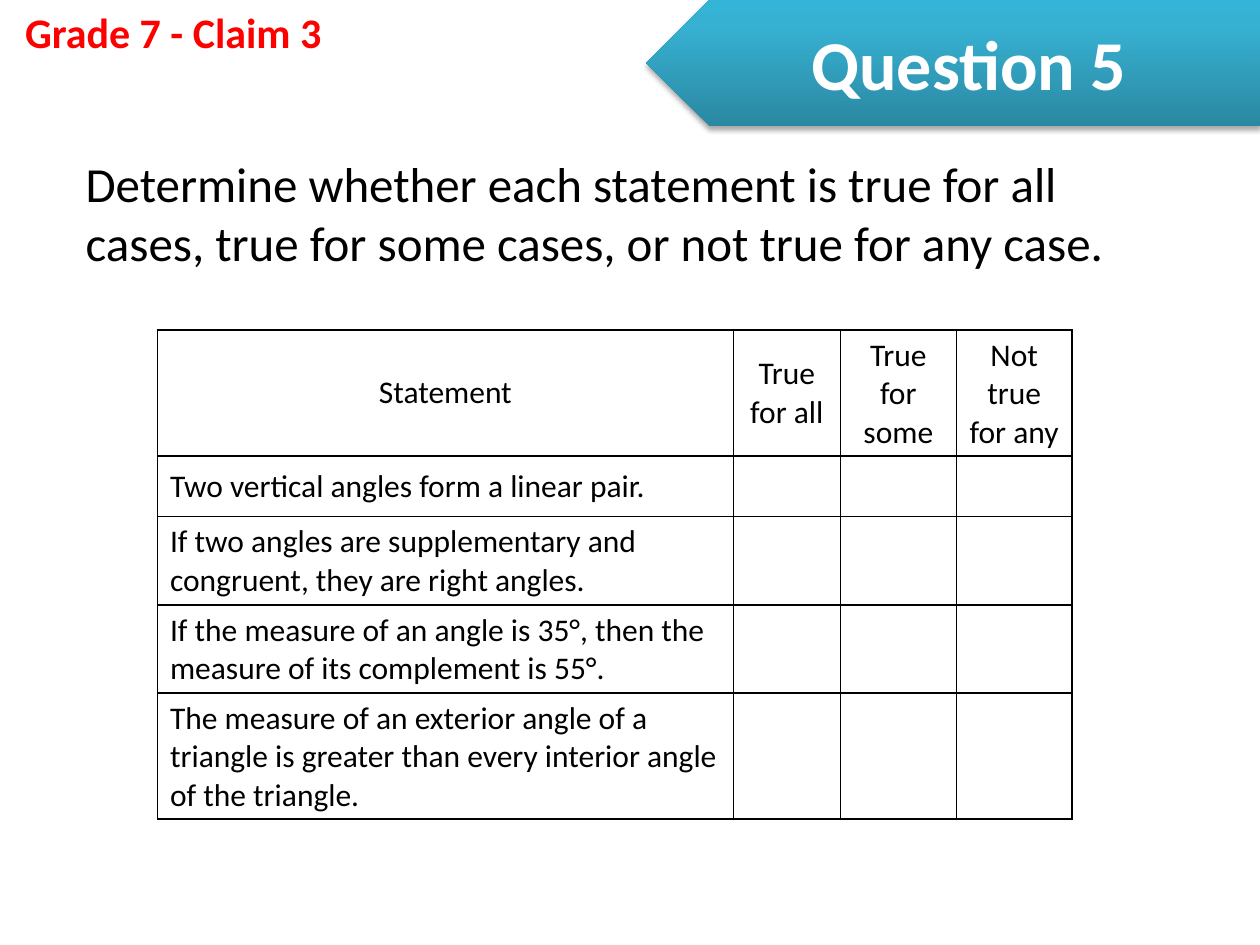
from pptx import Presentation
from pptx.dml.color import RGBColor
from pptx.enum.shapes import MSO_SHAPE as Preset
from pptx.enum.text import MSO_ANCHOR as Anchor, MSO_AUTO_SIZE as AutoSize, PP_ALIGN as Align
from pptx.oxml import parse_xml
from pptx.oxml.ns import nsdecls
from pptx.util import Inches, Pt

COLORS = {
    "black": "000000",
    "white": "FFFFFF",
    "red": "FF0000",
    "teal_dark": "2A88A2",
    "teal": "37B1D2",
    "teal_light": "34B4D6",
}
BANNER_STOPS = [(0, "teal_dark"), (80, "teal"), (100, "teal_light")]
COLUMN_WIDTHS = [4.57, 0.85, 0.92, 0.92]
ROW_HEIGHTS = [0.43, 0.48, 0.67, 0.63, 0.87]
HEADERS = ["Statement", "True for all", "True for some", "Not true for any"]
STATEMENTS = [
    "Two vertical angles form a linear pair.",
    "If two angles are supplementary and congruent, they are right angles.",
    "If the measure of an angle is 35°, then the measure of its complement is 55°.",
    "The measure of an exterior angle of a triangle is greater than every interior angle of the triangle.",
]


def place(shape, box):
    for name, value in zip(("left", "top", "width", "height"), box):
        setattr(shape, name, Inches(value))


def write(frame, text, size, color="black", bold=False, align=Align.LEFT):
    frame.text = text
    paragraph = frame.paragraphs[0]
    paragraph.alignment = align
    font = paragraph.runs[0].font
    for name, value in {"name": "Calibri", "size": Pt(size), "bold": bold}.items():
        setattr(font, name, value)
    font.color.rgb = RGBColor.from_string(COLORS[color])
    return paragraph


def add_banner(slide, text):
    left, width, height = 5.13, 4.87, 1
    banner = slide.shapes.add_shape(Preset.PENTAGON, 0, 0, 0, 0)
    place(banner, (left, 0, width, height))
    properties = banner.element.spPr
    properties.xfrm.set("flipH", "1")
    stops = "".join(
        f'<a:gs pos="{share * 1000}"><a:srgbClr val="{COLORS[color]}"/></a:gs>'
        for share, color in BANNER_STOPS
    )
    properties.append(parse_xml(
        f'<a:gradFill {nsdecls("a")} rotWithShape="1"><a:gsLst>{stops}</a:gsLst>'
        '<a:lin ang="16200000" scaled="0"/></a:gradFill>'
    ))
    banner.line.fill.background()
    properties.append(parse_xml(
        f'<a:effectLst {nsdecls("a")}>'
        f'<a:outerShdw blurRad="{Pt(3.1)}" dist="{Pt(1.8)}" dir="5400000" rotWithShape="0">'
        f'<a:srgbClr val="{COLORS["black"]}"><a:alpha val="35000"/></a:srgbClr>'
        '</a:outerShdw></a:effectLst>'
    ))

    title = slide.shapes.title
    point = height / 4
    place(title, (left + point, 0, width - point, height))
    title.text_frame.vertical_anchor = Anchor.MIDDLE
    write(title.text_frame, text, 40, "white", True, Align.CENTER)
    banner.element.addnext(title.element)


def add_label(slide, text):
    label = slide.shapes.add_textbox(0, 0, Inches(2.75), Inches(0.5))
    frame = label.text_frame
    frame.word_wrap = True
    frame.auto_size = AutoSize.SHAPE_TO_FIT_TEXT
    write(frame, text, 24, "red", True, Align.CENTER)


def fill_body(slide, text):
    body = slide.placeholders[1]
    place(body, (0.58, 1.17, 8.33, 1.25))
    properties = write(body.text_frame, text, 28)._p.get_or_add_pPr()
    for name in ("marL", "indent"):
        properties.set(name, "0")
    properties.append(parse_xml(f'<a:buNone {nsdecls("a")}/>'))


def format_cell(cell):
    cell.vertical_anchor = Anchor.MIDDLE
    properties = cell._tc.get_or_add_tcPr()
    for side in ("lnL", "lnR", "lnT", "lnB"):
        properties.append(parse_xml(
            f'<a:{side} {nsdecls("a")} w="{Pt(1)}"><a:solidFill>'
            f'<a:srgbClr val="{COLORS["black"]}"/></a:solidFill></a:{side}>'
        ))
    cell.fill.background()


def add_statement_table(slide):
    table = slide.shapes.add_table(
        len(ROW_HEIGHTS), len(COLUMN_WIDTHS),
        Inches(1.25), Inches(2.62), Inches(sum(COLUMN_WIDTHS)), Inches(sum(ROW_HEIGHTS)),
    ).table
    table.first_row = table.horz_banding = False
    for column, width in zip(table.columns, COLUMN_WIDTHS):
        column.width = Inches(width)
    for row, height in zip(table.rows, ROW_HEIGHTS):
        row.height = Inches(height)
    for cell in table.iter_cells():
        format_cell(cell)
    for index, text in enumerate(HEADERS):
        write(table.cell(0, index).text_frame, text, 18, align=Align.CENTER)
    for index, text in enumerate(STATEMENTS, start=1):
        write(table.cell(index, 0).text_frame, text, 18)


def main():
    presentation = Presentation()
    presentation.slide_width, presentation.slide_height = Inches(10), Inches(7.5)
    slide = presentation.slides.add_slide(presentation.slide_layouts[1])
    add_label(slide, "Grade 7 - Claim 3")
    fill_body(
        slide,
        "Determine whether each statement is true for all cases, "
        "true for some cases, or not true for any case.",
    )
    add_statement_table(slide)
    add_banner(slide, "Question 5")
    presentation.save("out.pptx")


if __name__ == "__main__":
    main()
